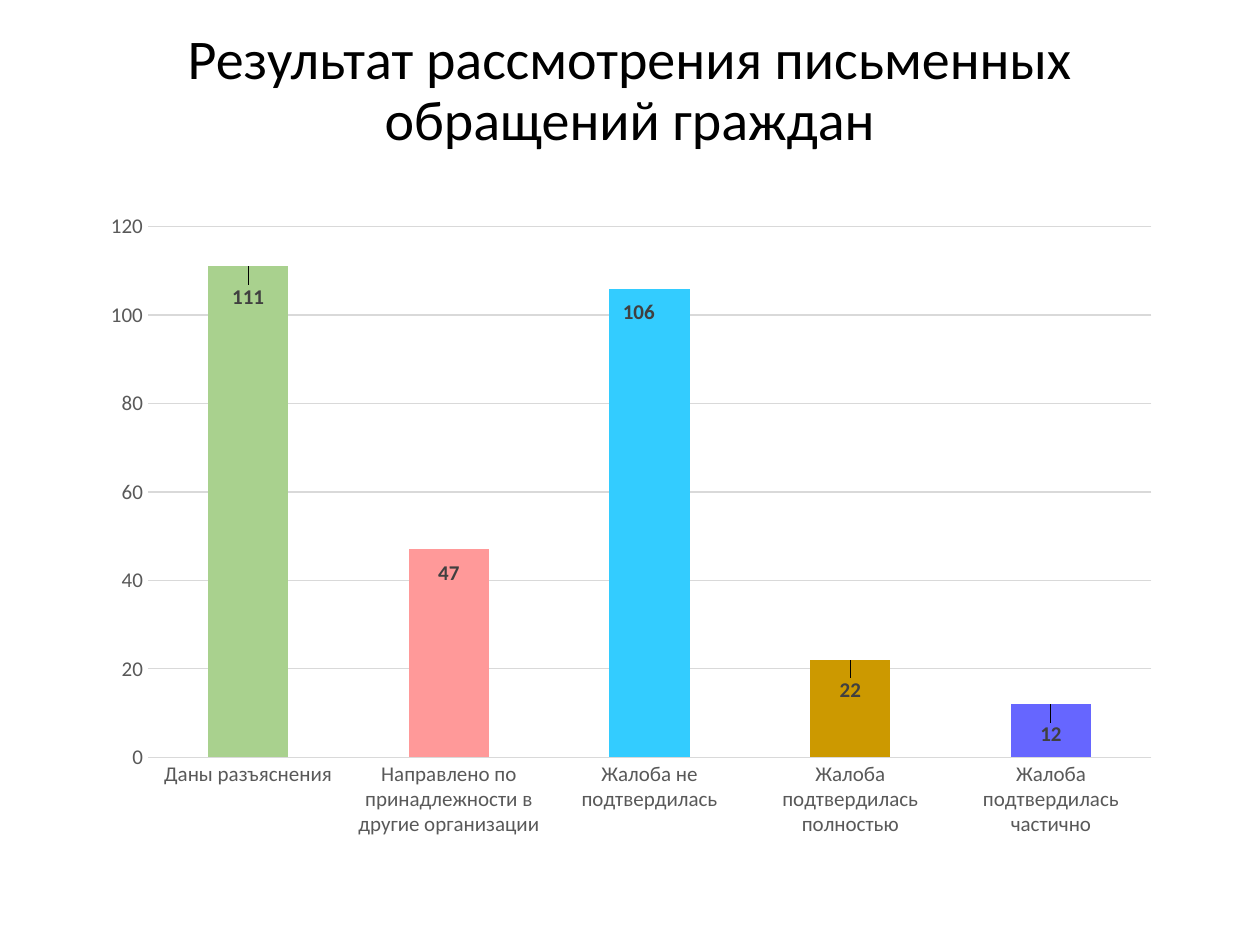
from lxml import etree
from pptx import Presentation
from pptx.chart.data import CategoryChartData
from pptx.dml.color import RGBColor
from pptx.enum.chart import XL_CHART_TYPE, XL_LABEL_POSITION, XL_TICK_MARK
from pptx.enum.text import MSO_ANCHOR, PP_ALIGN
from pptx.oxml.ns import qn
from pptx.util import Cm, Pt

FONT = "Calibri"
BLACK = RGBColor(0x00, 0x00, 0x00)
AXIS_GRAY = RGBColor(0x59, 0x59, 0x59)
LABEL_GRAY = RGBColor(0x40, 0x40, 0x40)
GRID_GRAY = RGBColor(0xD9, 0xD9, 0xD9)
SERIES_BLUE = RGBColor(0x5B, 0x9B, 0xD5)
GREEN = RGBColor(0xA9, 0xD1, 0x8E)
PINK = RGBColor(0xFF, 0x99, 0x99)
CYAN = RGBColor(0x33, 0xCC, 0xFF)
OCHRE = RGBColor(0xCC, 0x99, 0x00)
VIOLET = RGBColor(0x66, 0x66, 0xFF)

TITLE = "Результат рассмотрения письменных обращений граждан"
# category, value, bar colour, label offset (share of the chart's width and height)
OUTCOMES = [
    ("Даны разъяснения", 111, GREEN, (0, 0.02)),
    ("Направлено по принадлежности в другие организации", 47, PINK, (0, 0.01)),
    ("Жалоба не подтвердилась", 106, CYAN, (-0.01, 0.01)),
    ("Жалоба подтвердилась полностью", 22, OCHRE, (0, 0.02)),
    ("Жалоба подтвердилась частично", 12, VIOLET, (0, 0.02)),
]


def format_font(font, size, color, bold=False):
    font.name = FONT
    font.size = Pt(size)
    font.bold = bold
    font.color.rgb = color


def make_layout(**settings):
    """Return a c:layout element holding the given manual settings."""
    layout = etree.Element(qn("c:layout"))
    manual = etree.SubElement(layout, qn("c:manualLayout"))
    for name, value in settings.items():
        etree.SubElement(manual, qn(f"c:{name}")).set("val", str(value))
    return layout


def fix_plot_area(chart):
    """Place the inside of the plot area within the chart."""
    plot_area = chart._chartSpace.chart.plotArea
    for layout in plot_area.findall(qn("c:layout")):
        plot_area.remove(layout)
    plot_area.insert(0, make_layout(layoutTarget="inner", xMode="edge", yMode="edge",
                                    x=0.054, y=0.039, w=0.925, h=0.818))


def format_axes(chart):
    for axis in (chart.category_axis, chart.value_axis):
        axis.major_tick_mark = XL_TICK_MARK.NONE
        axis.minor_tick_mark = XL_TICK_MARK.NONE
        axis.format.line.fill.background()
        format_font(axis.tick_labels.font, 12, AXIS_GRAY)
    value_axis = chart.value_axis
    value_axis.minimum_scale = 0
    value_axis.maximum_scale = 120
    value_axis.major_unit = 20
    grid_line = value_axis.major_gridlines.format.line
    grid_line.color.rgb = GRID_GRAY
    grid_line.width = Pt(0.75)


def format_bars(plot):
    plot.gap_width = 150
    plot.vary_by_categories = False
    series = plot.series[0]
    series.format.fill.solid()
    series.format.fill.fore_color.rgb = SERIES_BLUE
    labels = series.data_labels
    labels.show_value = True
    labels.position = XL_LABEL_POSITION.INSIDE_END
    format_font(labels.font, 12, LABEL_GRAY, bold=True)

    for index, (_, _, color, (shift_x, shift_y)) in enumerate(OUTCOMES):
        point = series.points[index]
        point.format.fill.solid()
        point.format.fill.fore_color.rgb = color
        label = point.data_label
        label.position = XL_LABEL_POSITION.INSIDE_END
        format_font(label.font, 12, LABEL_GRAY, bold=True)
        label_element = labels._element.findall(qn("c:dLbl"))[index]
        label_element.insert(1, make_layout(x=shift_x, y=shift_y))


def add_outcome_chart(slide, left, top, width, height):
    data = CategoryChartData()
    data.categories = [outcome[0] for outcome in OUTCOMES]
    data.add_series("Series 1", [outcome[1] for outcome in OUTCOMES])
    chart = slide.shapes.add_chart(
        XL_CHART_TYPE.COLUMN_CLUSTERED, left, top, width, height, data).chart
    chart.has_legend = False
    chart.has_title = False
    format_font(chart.font, 10, BLACK)
    fix_plot_area(chart)
    format_axes(chart)
    format_bars(chart.plots[0])


def place_title(slide, left, top, width, height):
    title = slide.shapes.title
    title.left, title.top, title.width, title.height = left, top, width, height
    text_frame = title.text_frame
    text_frame.text = TITLE
    text_frame.word_wrap = True
    text_frame.vertical_anchor = MSO_ANCHOR.MIDDLE
    paragraph = text_frame.paragraphs[0]
    paragraph.alignment = PP_ALIGN.CENTER
    paragraph.line_spacing = 0.9
    format_font(paragraph.runs[0].font, 32, BLACK)


def main():
    presentation = Presentation()
    presentation.slide_width = Cm(25.4)
    presentation.slide_height = Cm(19.05)
    slide = presentation.slides.add_slide(presentation.slide_layouts[5])
    place_title(slide, Cm(1.75), Cm(0), Cm(21.9), Cm(3.7))
    add_outcome_chart(slide, Cm(1.8), Cm(4.06), Cm(21.87), Cm(13.08))
    presentation.save("out.pptx")


if __name__ == "__main__":
    main()
